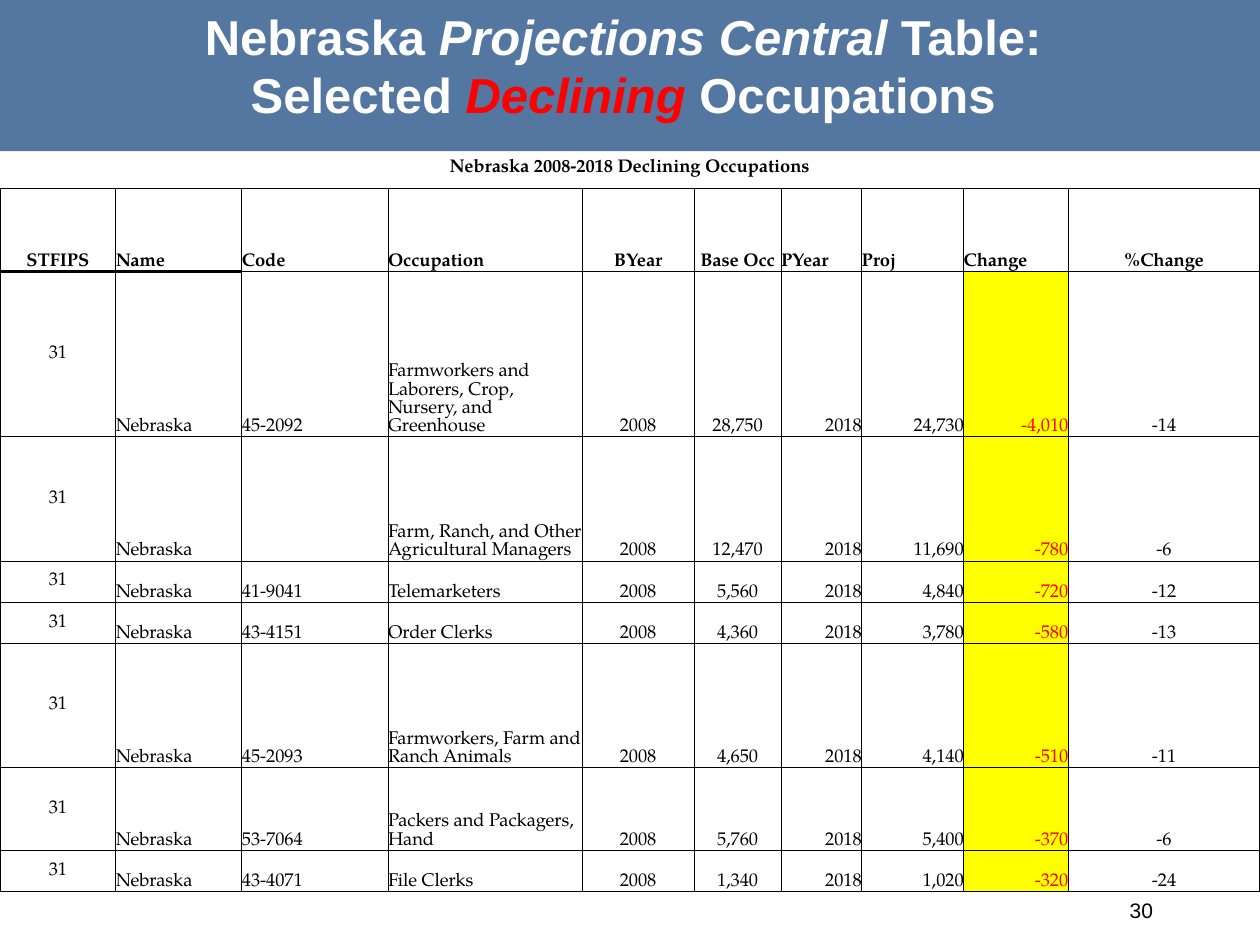
from lxml.etree import SubElement
from pptx import Presentation
from pptx.dml.color import RGBColor
from pptx.enum.shapes import MSO_SHAPE
from pptx.enum.text import MSO_ANCHOR, PP_ALIGN
from pptx.oxml.ns import qn
from pptx.util import Inches, Pt

W, H = 10, 7.5
ROW_UNITS = [1, 2, 4, 3, 1, 1, 3, 2, 1]
COLS = [0.92, 1, 1.16, 1.54, 0.89, 0.69, 0.64, 0.81, 0.83, 1.52]
L, C, R = PP_ALIGN.LEFT, PP_ALIGN.CENTER, PP_ALIGN.RIGHT
HEAD_ALIGN = [C, L, L, L, C, C, L, L, L, C]
BODY_ALIGN = [C, L, L, L, C, C, R, R, R, C]
CHANGE = 8
CAPTION = "Nebraska 2008-2018 Declining Occupations"
HEADERS = ["STFIPS", "Name", "Code", "Occupation", "BYear", "Base Occ",
           "PYear", "Proj", "Change", "%Change"]
JOBS = [
    ("45-2092", "Farmworkers and Laborers, Crop, Nursery, and Greenhouse",
     "28,750", "24,730", "-4,010", "-14"),
    ("", "Farm, Ranch, and Other Agricultural Managers",
     "12,470", "11,690", "-780", "-6"),
    ("41-9041", "Telemarketers", "5,560", "4,840", "-720", "-12"),
    ("43-4151", "Order Clerks", "4,360", "3,780", "-580", "-13"),
    ("45-2093", "Farmworkers, Farm and Ranch Animals",
     "4,650", "4,140", "-510", "-11"),
    ("53-7064", "Packers and Packagers, Hand",
     "5,760", "5,400", "-370", "-6"),
    ("43-4071", "File Clerks", "1,340", "1,020", "-320", "-24"),
]


def rgb(value):
    return RGBColor.from_string(value)


def add_text(p, text, font="Arial", size=12, color="000000", bold=False,
             italic=False, align=L):
    p.alignment = align
    f = p.font
    if text:
        r = p.add_run()
        r.text = text
        f = r.font
    f.name, f.size, f.bold, f.italic = font, Pt(size), bold, italic
    f.color.rgb = rgb(color)


def add_box(s, x, y, w, h, anchor=MSO_ANCHOR.TOP):
    sp = s.shapes.add_textbox(Inches(x), Inches(y), Inches(w), Inches(h))
    tf = sp.text_frame
    tf.word_wrap = True
    tf.vertical_anchor = anchor
    return tf


def add_band(s, x, y, w, h):
    sp = s.shapes.add_shape(MSO_SHAPE.RECTANGLE, Inches(x), Inches(y),
                            Inches(w), Inches(h))
    sp.shadow.inherit = False
    sp.fill.solid()
    sp.fill.fore_color.rgb = rgb("376092")
    sp.line.fill.background()
    clr = sp.fill._xPr.find(qn("a:solidFill"))[0]
    SubElement(clr, qn("a:alpha"), val="85000")


def add_title(s, x, y, w, h):
    tf = add_box(s, x, y, w, h)
    lines = [
        [("Nebraska ", {}), ("Projections Central ", {"italic": True}),
         ("Table: ", {})],
        [("Selected ", {}),
         ("Declining ", {"italic": True, "color": "FF0000"}),
         ("Occupations ", {})],
    ]
    for i, line in enumerate(lines):
        p = tf.add_paragraph() if i else tf.paragraphs[0]
        for text, fmt in line:
            add_text(p, text, **{"size": 28, "color": "FFFFFF", "bold": True,
                                 "align": C, **fmt})


def set_borders(cell, widths):
    tcPr = cell._tc.get_or_add_tcPr()
    for i, side in enumerate(("lnL", "lnR", "lnT", "lnB")):
        width = widths.get(side, 0)
        ln = tcPr.makeelement(qn("a:" + side), {"w": str(Pt(width))})
        if width:
            fill = SubElement(ln, qn("a:solidFill"))
            SubElement(fill, qn("a:srgbClr"), val="000000")
        else:
            SubElement(ln, qn("a:noFill"))
        tcPr.insert(i, ln)


def fill_cell(cell, text, align, borders, anchor=MSO_ANCHOR.BOTTOM,
              bold=False, color="000000", fill=None):
    cell.margin_left = cell.margin_right = 0
    cell.margin_top = cell.margin_bottom = 0
    cell.vertical_anchor = anchor
    if fill:
        cell.fill.solid()
        cell.fill.fore_color.rgb = rgb(fill)
    else:
        cell.fill.background()
    add_text(cell.text_frame.paragraphs[0], text, font="TeX Gyre Pagella",
             size=10.5, color=color, bold=bold, align=align)
    set_borders(cell, borders)


def add_projections(s, x, y, w, h):
    table = s.shapes.add_table(len(ROW_UNITS), len(COLS), Inches(x), Inches(y),
                               Inches(w), Inches(h)).table
    table.first_row = table.horz_banding = False
    for col, width in zip(table.columns, COLS):
        col.width = Inches(w * width / sum(COLS))
    for row, units in zip(table.rows, ROW_UNITS):
        row.height = Inches(h * units / sum(ROW_UNITS))

    table.cell(0, 0).merge(table.cell(0, len(COLS) - 1))
    for c in range(len(COLS)):
        fill_cell(table.cell(0, c), "" if c else CAPTION, C, {"lnB": 0.5},
                  MSO_ANCHOR.MIDDLE, bold=True)

    rows = [HEADERS] + [
        ["31", "Nebraska", code, job, "2008", base, "2018", proj, change, pct]
        for code, job, base, proj, change, pct in JOBS]
    for r, values in enumerate(rows, 1):
        head = r == 1
        for c, text in enumerate(values):
            borders = dict.fromkeys(("lnL", "lnR", "lnT", "lnB"), 0.5)
            if c < 2 and r < 3:
                borders["lnB" if head else "lnT"] = 2
            marked = c == CHANGE and not head
            middle = c == 0 and not head
            fill_cell(table.cell(r, c), text,
                      (HEAD_ALIGN if head else BODY_ALIGN)[c], borders,
                      MSO_ANCHOR.MIDDLE if middle else MSO_ANCHOR.BOTTOM,
                      bold=head, color="FF0000" if marked else "000000",
                      fill="FFFF00" if marked else None)


def add_page_number(s, x, y, w, h):
    tf = add_box(s, x, y, w, h, MSO_ANCHOR.MIDDLE)
    add_text(tf.paragraphs[0], "30", align=R)


def main():
    prs = Presentation()
    prs.slide_width, prs.slide_height = Inches(W), Inches(H)
    s = prs.slides.add_slide(prs.slide_layouts[6])
    add_band(s, 0, 0, W, 0.16 * H)
    add_page_number(s, 6.92, 7.02, 2.33, 0.4)
    add_projections(s, 0, 1.17, W, 5.91)
    add_title(s, 0, 0, W, 1.04)
    prs.save("out.pptx")


if __name__ == "__main__":
    main()
